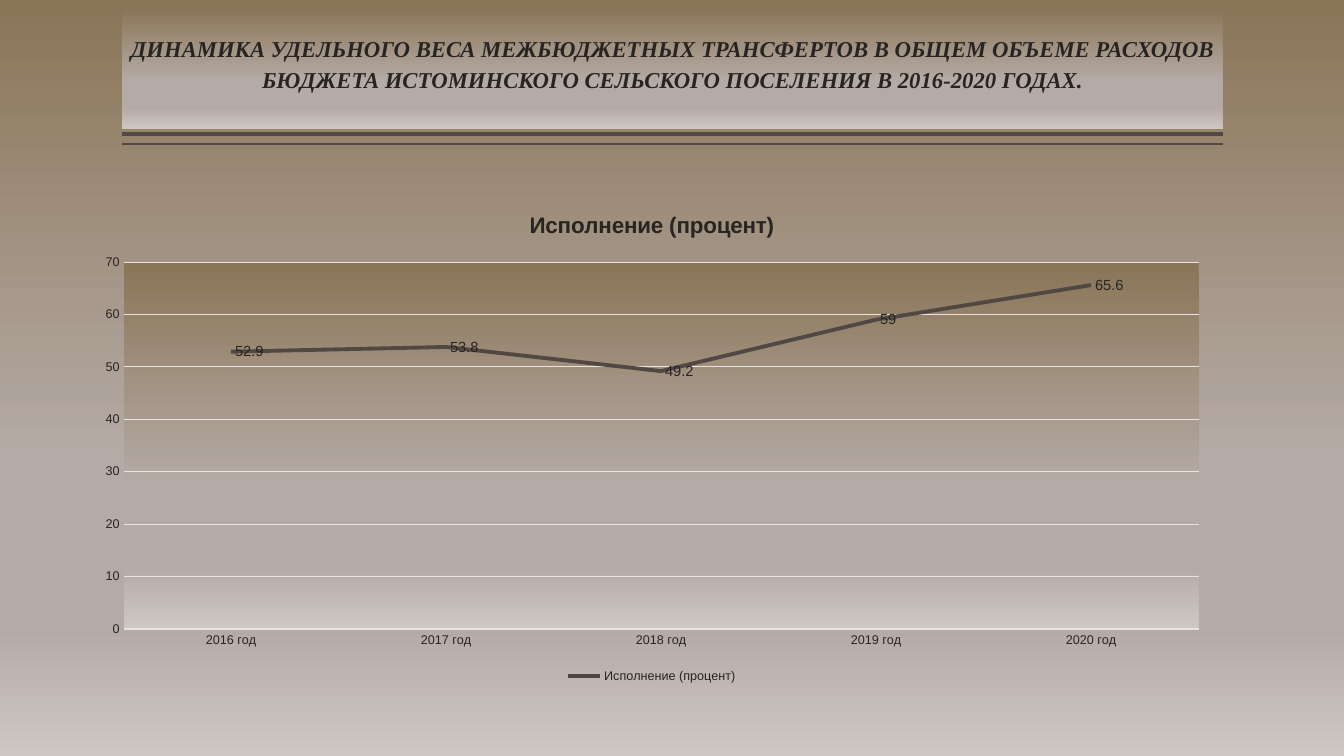
from copy import deepcopy

from pptx import Presentation
from pptx.chart.data import CategoryChartData
from pptx.dml.color import RGBColor
from pptx.dml.fill import FillFormat
from pptx.enum.chart import XL_CHART_TYPE as ChartType
from pptx.enum.chart import XL_LABEL_POSITION as LabelPosition
from pptx.enum.chart import XL_LEGEND_POSITION as LegendPosition
from pptx.enum.chart import XL_MARKER_STYLE as MarkerStyle
from pptx.enum.chart import XL_TICK_MARK as TickMark
from pptx.enum.shapes import MSO_CONNECTOR as Connector
from pptx.enum.text import MSO_ANCHOR as Anchor
from pptx.enum.text import MSO_AUTO_SIZE as AutoSize
from pptx.enum.text import PP_ALIGN as Align
from pptx.oxml.ns import qn
from pptx.oxml.xmlchemy import OxmlElement
from pptx.util import Cm, Pt

INK = RGBColor(0x28, 0x24, 0x22)
BROWN = RGBColor(0x51, 0x48, 0x43)
PALE = RGBColor(0xE6, 0xE3, 0xE1)
OLIVE = RGBColor(0x8A, 0x75, 0x57)
TAUPE = RGBColor(0xB5, 0xAB, 0xA6)
MIST = RGBColor(0xCE, 0xC7, 0xC4)
GRADIENT = [(0, OLIVE), (0.61, TAUPE), (0.83, TAUPE), (1, MIST)]

HEADING = (
    "ДИНАМИКА УДЕЛЬНОГО ВЕСА МЕЖБЮДЖЕТНЫХ ТРАНСФЕРТОВ В ОБЩЕМ ОБЪЕМЕ РАСХОДОВ "
    "БЮДЖЕТА ИСТОМИНСКОГО СЕЛЬСКОГО ПОСЕЛЕНИЯ В 2016-2020 ГОДАХ."
)
SERIES_NAME = "Исполнение (процент)"
SHARES = {2016: 52.9, 2017: 53.8, 2018: 49.2, 2019: 59, 2020: 65.6}


def format_font(font, size, name="Arial", color=INK, bold=False, italic=False):
    font.size = Pt(size)
    font.name = name
    font.color.rgb = color
    font.bold = bold
    font.italic = italic


def write_text(frame, text, **style):
    para = frame.paragraphs[0]
    span = para.add_run()
    span.text = text
    format_font(span.font, **style)
    return para


def fill_gradient(fill, owner):
    fill.gradient()
    fill.gradient_angle = 270
    stop_list = owner.find(".//" + qn("a:gsLst"))
    for _ in GRADIENT[2:]:
        stop_list.append(deepcopy(stop_list[0]))
    for stop, (position, color) in zip(fill.gradient_stops, GRADIENT):
        stop.position = position
        stop.color.rgb = color


def add_rule(page, left, top, width, weight):
    rule = page.shapes.add_connector(Connector.STRAIGHT, left, top, left + width, top)
    rule.line.color.rgb = BROWN
    rule.line.width = Pt(weight)
    rule._element.spPr.append(OxmlElement("a:effectLst"))


def add_heading(page, left, top, width, height):
    box = page.shapes.title
    box.left, box.top, box.width, box.height = left, top, width, height
    fill_gradient(box.fill, box._element)
    frame = box.text_frame
    frame.word_wrap = True
    frame.auto_size = AutoSize.NONE
    frame.vertical_anchor = Anchor.BOTTOM
    frame.margin_left = frame.margin_right = 0
    frame.margin_top = Cm(0.13)
    frame.margin_bottom = Cm(0.9)
    para = write_text(frame, HEADING, size=16.2, name="Times New Roman",
                      bold=True, italic=True)
    para.alignment = Align.CENTER
    para.line_spacing = 1.15
    para.space_before = Pt(0)
    add_rule(page, left, top + height + Cm(0.13), width, 3)
    add_rule(page, left, top + height + Cm(0.38), width, 1)


def set_plot_area(chart, **bounds):
    area = chart._chartSpace.chart.plotArea
    for old in area.findall(qn("c:layout")):
        area.remove(old)
    layout = OxmlElement("c:layout")
    manual = OxmlElement("c:manualLayout")
    layout.append(manual)
    settings = {"layoutTarget": "inner", "xMode": "edge", "yMode": "edge", **bounds}
    for tag, value in settings.items():
        setting = OxmlElement("c:" + tag)
        setting.set("val", str(value))
        manual.append(setting)
    area.insert(0, layout)
    properties = OxmlElement("c:spPr")
    area.append(properties)
    fill_gradient(FillFormat.from_fill_parent(properties), properties)


def format_axes(chart):
    for axis in (chart.category_axis, chart.value_axis):
        axis.major_tick_mark = axis.minor_tick_mark = TickMark.NONE
        format_font(axis.tick_labels.font, size=9)
    chart.category_axis.format.line.color.rgb = PALE
    chart.category_axis.format.line.width = Pt(1)
    values = chart.value_axis
    values.minimum_scale, values.maximum_scale, values.major_unit = 0, 70, 10
    values.format.line.fill.background()
    values.has_major_gridlines = True
    values.major_gridlines.format.line.color.rgb = PALE
    values.major_gridlines.format.line.width = Pt(0.75)


def add_share_chart(page, left, top, width, height):
    data = CategoryChartData()
    data.categories = [f"{year} год" for year in SHARES]
    data.add_series(SERIES_NAME, SHARES.values())
    chart = page.shapes.add_chart(ChartType.LINE, left, top, width, height, data).chart
    format_font(chart.font, size=10, color=BROWN)
    chart.has_title = True
    write_text(chart.chart_title.text_frame, SERIES_NAME, size=16, bold=True)
    chart.chart_title.include_in_layout = False
    chart.has_legend = True
    chart.legend.position = LegendPosition.BOTTOM
    chart.legend.include_in_layout = False
    format_font(chart.legend.font, size=9)
    format_axes(chart)

    plot = chart.plots[0]
    plot.vary_by_categories = False
    series = plot.series[0]
    series.smooth = False
    series.marker.style = MarkerStyle.NONE
    series.format.line.color.rgb = BROWN
    series.format.line.width = Pt(2.75)
    labels = series.data_labels
    labels.show_value = True
    labels.position = LabelPosition.RIGHT
    format_font(labels.font, size=10.5)
    set_plot_area(chart, x=0.036, y=0.142, w=0.944, h=0.74)


def build_page(deck):
    page = deck.slides.add_slide(deck.slide_layouts[5])
    fill_gradient(page.background.fill, page.element)
    add_heading(page, Cm(3.07), Cm(0.2), Cm(27.74), Cm(3.05))
    add_share_chart(page, Cm(2.08), Cm(4.83), Cm(28.7), Cm(12.5))


def main():
    deck = Presentation()
    deck.slide_width, deck.slide_height = Cm(33.87), Cm(19.05)
    build_page(deck)
    deck.save("out.pptx")


if __name__ == "__main__":
    main()
